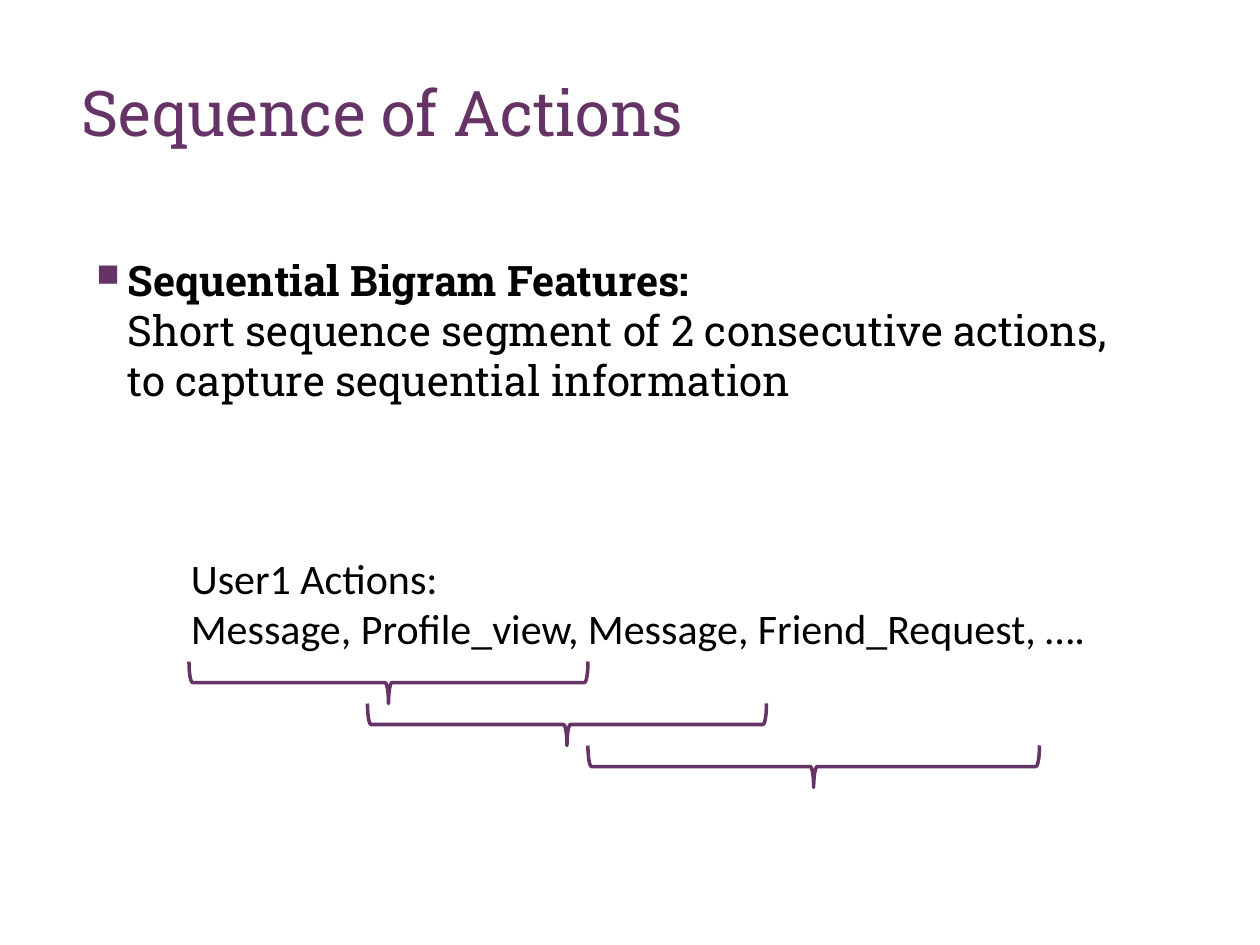
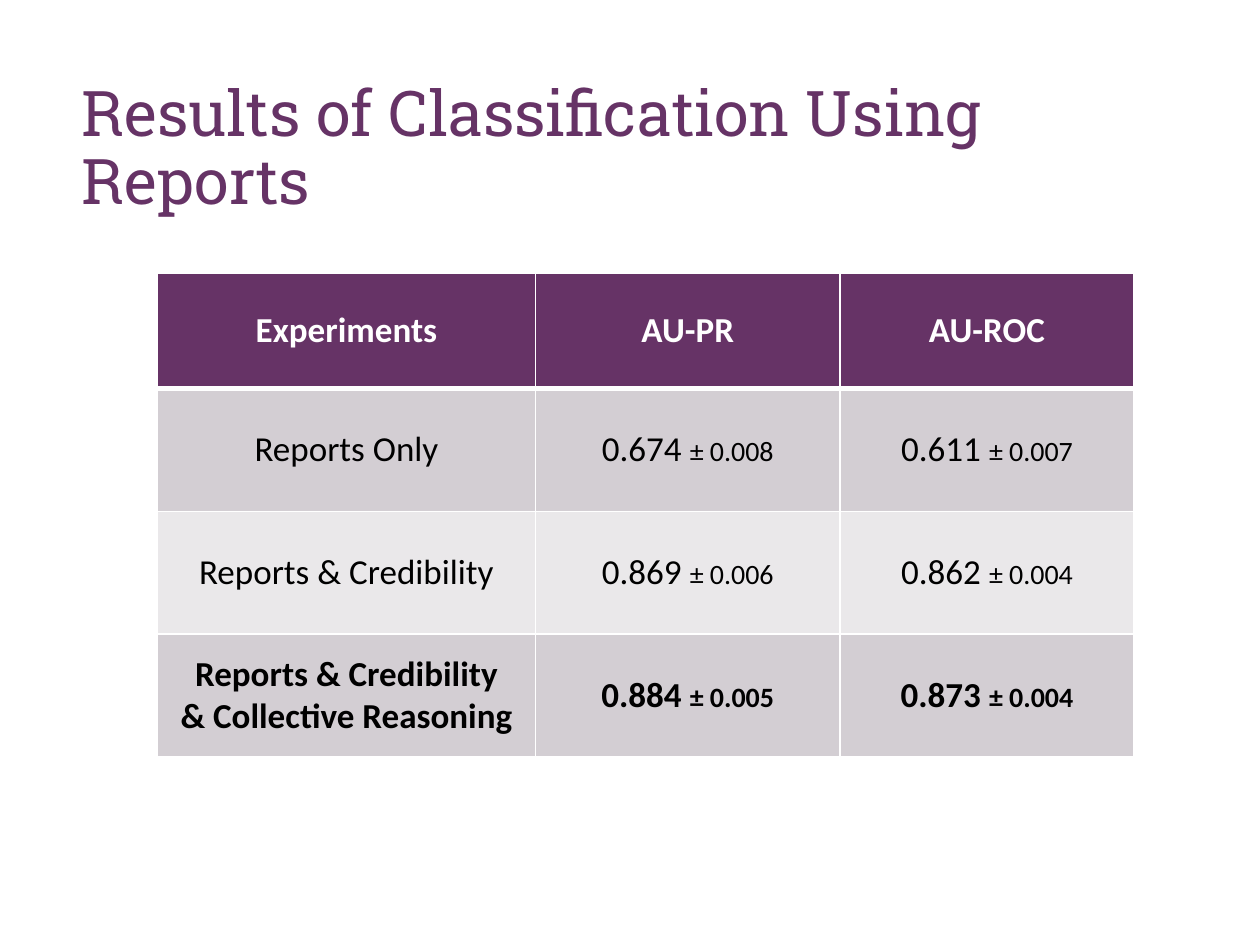
from lxml.etree import SubElement
from pptx import Presentation
from pptx.dml.color import RGBColor
from pptx.enum.shapes import MSO_SHAPE
from pptx.enum.text import MSO_ANCHOR, MSO_AUTO_SIZE, PP_ALIGN
from pptx.oxml.ns import qn
from pptx.util import Emu, Pt

PLUM = RGBColor(0x66, 0x33, 0x66)
BLACK = RGBColor(0, 0, 0)
WHITE = RGBColor(255, 255, 255)
DARK_BAND = RGBColor(0xD3, 0xCE, 0xD3)
LIGHT_BAND = RGBColor(0xEA, 0xE8, 0xEA)
SLAB = "Roboto Slab"
SANS = "Calibri"

BRACE_DEPTH = 40
BRACES = [(180, 380), (350, 380), (560, 430)]
COLUMN_WIDTHS = [360, 290, 280]
ROW_HEIGHTS = [110, 117, 117, 117]
HEADINGS = ["Experiments", "AU-PR", "AU-ROC"]
RESULTS = [
    ("Reports Only", ("0.674", "0.008"), ("0.611", "0.007")),
    ("Reports & Credibility", ("0.869", "0.006"), ("0.862", "0.004")),
    ("Reports & Credibility\v& Collective Reasoning", ("0.884", "0.005"), ("0.873", "0.004")),
]


def px(length):
    """Convert px, at 120 to the inch, into EMU."""
    return Emu(length * 7620)


def style(span, name, size, color, bold=False):
    """Set the font of a run."""
    font = span.font
    font.name, font.size, font.bold = name, Pt(size), bold
    font.color.rgb = color


def add_text(page, left, top, width, height, text, name, size, color, wrap=True):
    """Add a text box with one look for all its runs."""
    box = page.shapes.add_textbox(px(left), px(top), px(width), px(height))
    frame = box.text_frame
    frame.text = text
    frame.word_wrap = wrap
    for para in frame.paragraphs:
        for span in para.runs:
            style(span, name, size, color)
    return box


def add_title(page, text, scale=100):
    """Add the slide title, shrunk to a percentage of its size."""
    box = add_text(page, 66, 64, 991, 146, text, SLAB, 36, PLUM)
    box.text_frame.auto_size = MSO_AUTO_SIZE.TEXT_TO_FIT_SHAPE
    if scale < 100:
        autofit = box.element.find(".//" + qn("a:normAutofit"))
        autofit.set("fontScale", str(scale * 1000))


def add_bullet(para):
    """Give a paragraph a hanging square bullet."""
    properties = para._p.get_or_add_pPr()
    properties.set("marL", str(px(30)))
    properties.set("indent", str(-px(30)))
    color = SubElement(properties, qn("a:buClr"))
    SubElement(color, qn("a:srgbClr"), val=str(PLUM))
    SubElement(properties, qn("a:buSzPct"), val="75000")
    SubElement(properties, qn("a:buChar"), char="■")


def add_brace(page, left, top, width):
    """Add a brace that opens upwards, by turning a left brace."""
    frame_left = left + (width - BRACE_DEPTH) // 2
    frame_top = top - (width - BRACE_DEPTH) // 2
    brace = page.shapes.add_shape(
        MSO_SHAPE.LEFT_BRACE, px(frame_left), px(frame_top), px(BRACE_DEPTH), px(width))
    brace.rotation = 270
    brace.shadow.inherit = False
    brace.fill.background()
    brace.line.color.rgb = PLUM
    brace.line.width = Pt(2)


def add_borders(cell, top=1, bottom=1):
    """Draw white borders round a cell, widths in points."""
    properties = cell._tc.get_or_add_tcPr()
    for side, width in (("L", 1), ("R", 1), ("T", top), ("B", bottom)):
        line = SubElement(properties, qn("a:ln" + side), w=str(Pt(width)))
        fill = SubElement(line, qn("a:solidFill"))
        SubElement(fill, qn("a:srgbClr"), val=str(WHITE))


def fill_cell(cell, content, fill, color, bold):
    """Write a label, or a score with a smaller error, into a cell."""
    cell.fill.solid()
    cell.fill.fore_color.rgb = fill
    cell.vertical_anchor = MSO_ANCHOR.MIDDLE
    para = cell.text_frame.paragraphs[0]
    para.alignment = PP_ALIGN.CENTER
    label, error = (content, None) if isinstance(content, str) else content
    para.text = f"{label} " if error else label
    for span in para.runs:
        style(span, SANS, 20, color, bold)
    if error:
        span = para.add_run()
        span.text = f"± {error}"
        style(span, SANS, 16, color, bold)


def add_results_table(page):
    """Add the table of scores, with the last row in bold."""
    table = page.shapes.add_table(
        len(ROW_HEIGHTS), len(COLUMN_WIDTHS), px(150), px(260),
        px(sum(COLUMN_WIDTHS)), px(sum(ROW_HEIGHTS))).table
    table.first_row = table.horz_banding = False
    for column, width in zip(table.columns, COLUMN_WIDTHS):
        column.width = px(width)
    for row, height in zip(table.rows, ROW_HEIGHTS):
        row.height = px(height)
    for row, contents in enumerate([HEADINGS, *RESULTS]):
        header = row == 0
        band = PLUM if header else DARK_BAND if row % 2 else LIGHT_BAND
        for column, content in enumerate(contents):
            cell = table.cell(row, column)
            add_borders(cell, top=3 if row == 1 else 1, bottom=3 if header else 1)
            fill_cell(cell, content, band, WHITE if header else BLACK,
                      header or row == len(RESULTS))


def build_sequence(page):
    """Build the slide on bigrams of actions."""
    add_title(page, "Sequence of Actions")
    body = add_text(
        page, 80, 236, 1070, 263,
        "Sequential Bigram Features:\vShort sequence segment of 2 consecutive actions,"
        "\vto capture sequential information", SLAB, 24, BLACK)
    para = body.text_frame.paragraphs[0]
    add_bullet(para)
    para.runs[0].font.bold = True
    add_text(page, 170, 520, 890, 109,
             "User1 Actions:\nMessage, Profile_view, Message, Friend_Request, ….",
             SANS, 24, BLACK, wrap=False)
    for step, (left, width) in enumerate(BRACES):
        add_brace(page, left, 630 + step * BRACE_DEPTH, width)


def build_results(page):
    """Build the slide with the classification scores."""
    add_title(page, "Results of Classification Using Reports", scale=90)
    add_results_table(page)


def main():
    """Build and save the deck."""
    deck = Presentation()
    deck.slide_width, deck.slide_height = px(1200), px(900)
    for build in (build_sequence, build_results):
        build(deck.slides.add_slide(deck.slide_layouts[6]))
    deck.save("out.pptx")


if __name__ == "__main__":
    main()
